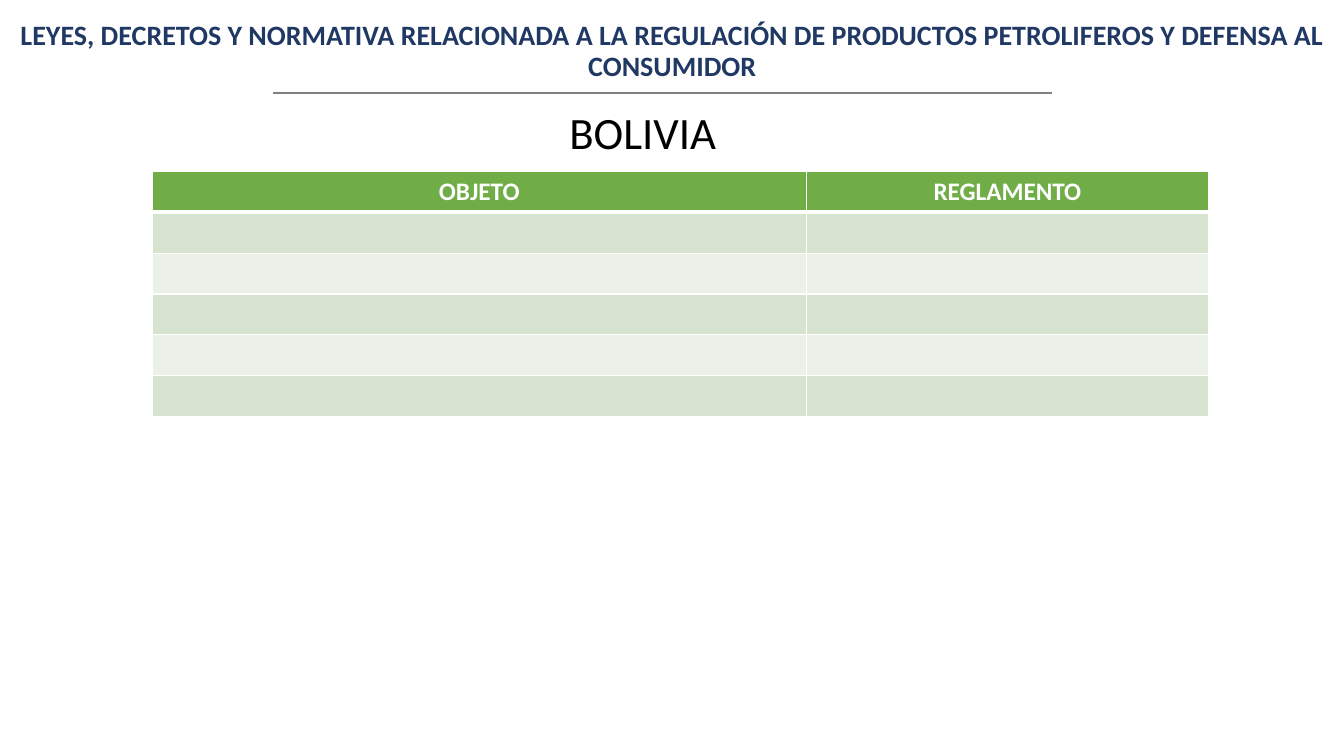
from lxml import etree
from pptx import Presentation
from pptx.dml.color import RGBColor
from pptx.enum import shapes, text
from pptx.oxml import ns
from pptx.util import Pt

COLORS = {"navy": "203864", "black": "000000", "white": "FFFFFF", "gray": "808080",
          "header": "70AD47", "band_dark": "D5E3CF", "band_light": "EBF1E9"}
HEADERS = ["OBJETO", "REGLAMENTO"]
COLUMN_WIDTHS = [467.28, 287.28]
ROW_COUNT = 6
ROW_HEIGHT = 29.2


def format_text(para, color, **font_values):
    values = {"name": "Calibri", "bold": False, **font_values}
    for name, value in values.items():
        setattr(para.font, name, value)
    para.font.color.rgb = RGBColor.from_string(COLORS[color])


def add_borders(cell, widths):
    """Draw white cell borders; widths maps a side letter to points."""
    properties = cell._tc.get_or_add_tcPr()
    for position, (side, width) in enumerate(widths.items()):
        line = etree.Element(ns.qn(f"a:ln{side}"), w=str(Pt(width)))
        fill = etree.SubElement(line, ns.qn("a:solidFill"))
        etree.SubElement(fill, ns.qn("a:srgbClr"), val=COLORS["white"])
        properties.insert(position, line)


deck = Presentation()
deck.slide_width, deck.slide_height = Pt(960), Pt(540)
page = deck.slides.add_slide(deck.slide_layouts[5])

title = page.shapes.title
title.left, title.top, title.width, title.height = Pt(4.3), Pt(-11.5), Pt(951.8), Pt(97.2)
title.text_frame.text = ("LEYES, DECRETOS Y NORMATIVA RELACIONADA A LA REGULACIÓN DE "
                         "PRODUCTOS PETROLIFEROS Y DEFENSA AL CONSUMIDOR")
title.text_frame.word_wrap = True
title.text_frame.auto_size = text.MSO_AUTO_SIZE.NONE
title.text_frame.vertical_anchor = text.MSO_ANCHOR.MIDDLE
heading = title.text_frame.paragraphs[0]
heading.alignment = text.PP_ALIGN.CENTER
heading.line_spacing = 0.9
format_text(heading, "navy", size=Pt(20), bold=True)

rule = page.shapes.add_connector(shapes.MSO_CONNECTOR.STRAIGHT,
                                 Pt(195.1), Pt(66.4), Pt(751.7), Pt(66.4))
rule.line.color.rgb = RGBColor.from_string(COLORS["gray"])
rule.line.width = Pt(1)
etree.SubElement(rule._element.spPr, ns.qn("a:effectLst"))

country = page.shapes.add_textbox(Pt(399.6), Pt(71.3), Pt(187.9), Pt(46))
country.text_frame.word_wrap = True
country.text_frame.text = "BOLIVIA"
format_text(country.text_frame.paragraphs[0], "black", size=Pt(32))

table = page.shapes.add_table(ROW_COUNT, len(HEADERS), Pt(108.7), Pt(122.4),
                              Pt(sum(COLUMN_WIDTHS)), Pt(ROW_COUNT * ROW_HEIGHT)).table
for column, width in zip(table.columns, COLUMN_WIDTHS):
    column.width = Pt(width)

for row_index, row in enumerate(table.rows):
    row.height = Pt(ROW_HEIGHT)
    is_header = row_index == 0
    fill = "header" if is_header else "band_dark" if row_index % 2 else "band_light"
    for column_index, cell in enumerate(row.cells):
        cell.fill.solid()
        cell.fill.fore_color.rgb = RGBColor.from_string(COLORS[fill])
        add_borders(cell, {"L": 1, "R": 1, "T": 3 if row_index == 1 else 1,
                           "B": 3 if is_header else 1})
        if is_header:
            cell.text = HEADERS[column_index]
            label = cell.text_frame.paragraphs[0]
            label.alignment = text.PP_ALIGN.CENTER
            format_text(label, "white", size=Pt(18), bold=True)

deck.save("out.pptx")
